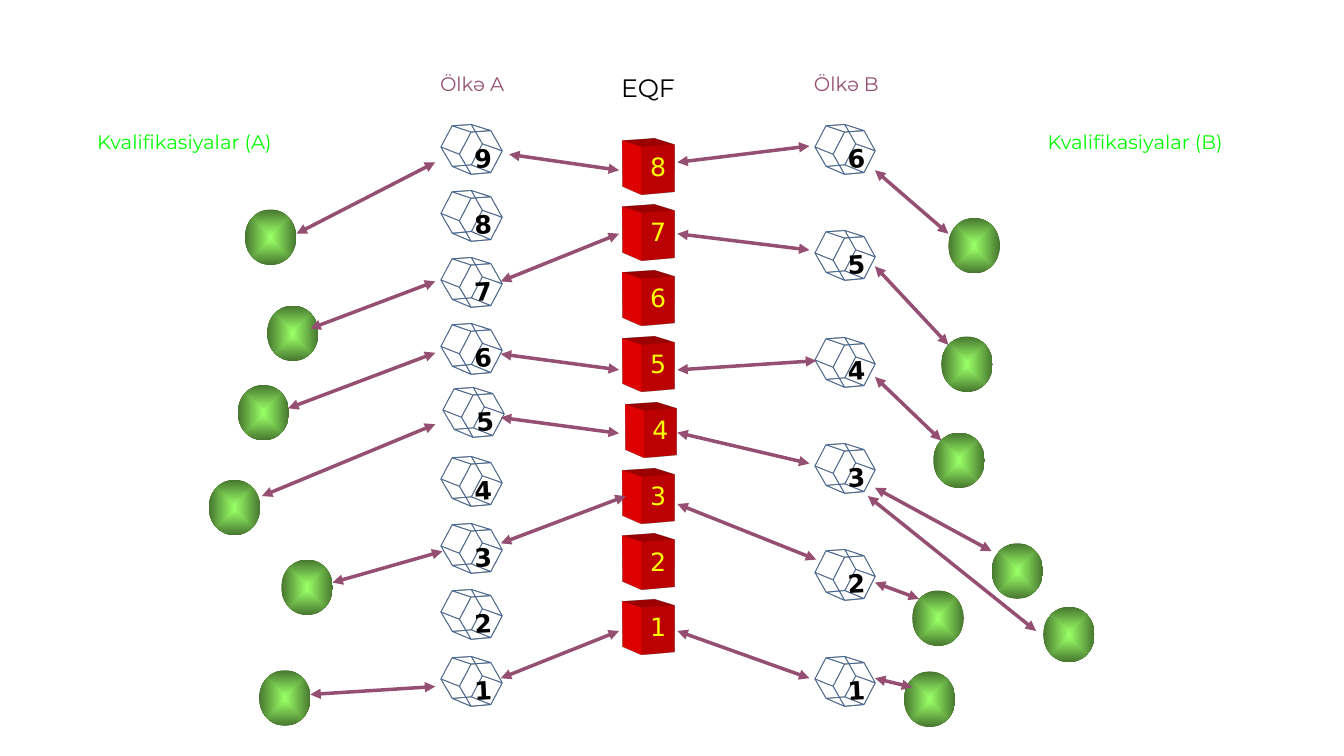
from collections import namedtuple
from dataclasses import dataclass

from lxml.etree import SubElement
from pptx import Presentation
from pptx.dml.color import RGBColor
from pptx.enum.shapes import MSO_CONNECTOR, MSO_SHAPE
from pptx.enum.text import MSO_ANCHOR, MSO_AUTO_SIZE, PP_ALIGN
from pptx.oxml import parse_xml
from pptx.oxml.ns import nsdecls, qn
from pptx.util import Cm, Pt


@dataclass(frozen=True)
class Theme:
    heading_font: str = "Montserrat"
    number_font: str = "DejaVu Sans"
    large: int = 18
    small: int = 14
    black: str = "000000"
    plum: str = "954F72"
    lime: str = "00FF00"
    yellow: str = "FFFF00"
    prism: str = "FFCC00"
    cube: str = "FF0000"
    ball_light: str = "99FF66"
    ball_dark: str = "47762F"


THEME = Theme()
Box = namedtuple("Box", "left top width height")

# Links between a country level and an EQF level: x1, y1, x2, y2
LINKS_A = [(0.21, 0.89, 2.98, 1.29), (0, 4.09, 2.98, 2.89),
           (0, 5.92, 2.98, 6.32), (0, 7.52, 2.98, 7.92),
           (0, 10.69, 3.15, 9.5), (0, 14.09, 2.98, 12.9)]
LINKS_B = [(3.33, 0.68, 0, 1.09), (3.33, 3.3, 0, 2.89),
           (3.5, 6.09, 0, 6.32), (3.33, 8.68, 0, 7.9),
           (3.5, 11.1, 0, 9.7), (3.33, 14.09, 0, 12.9)]

# Qualifications: ball corner, then its arrow
QUALIFICATIONS_A = [((1.17, 1.28), (2.47, 1.89, 5.97, 0.09)),
                    ((1.73, 3.7), (2.82, 4.28, 5.97, 3.09)),
                    ((0.99, 5.7), (2.26, 6.29, 5.97, 4.89)),
                    ((0.26, 8.09), (1.6, 8.5, 5.97, 6.69)),
                    ((2.09, 10.1), (3.38, 10.68, 6.15, 9.89)),
                    ((1.53, 12.89), (2.82, 13.5, 5.97, 13.3))]
QUALIFICATIONS_B = [((1.9, 1.49), (1.9, 1.89, 0.05, 0.29)),
                    ((1.72, 4.48), (1.9, 4.69, 0.05, 2.71)),
                    ((1.52, 6.9), (1.72, 7.1, 0.05, 5.5)),
                    ((2.99, 9.69), (2.99, 9.89, 0.05, 8.29)),
                    ((4.29, 11.29), (4.11, 11.9, -0.13, 8.5)),
                    ((0.99, 10.88), (1.16, 11.09, 0.05, 10.68)),
                    ((0.78, 12.92), (0.99, 13.32, 0.05, 13.09))]


def write(sp, text, color, **font):
    tf = sp.text_frame
    frame = {"word_wrap": False, "auto_size": MSO_AUTO_SIZE.NONE,
             "vertical_anchor": MSO_ANCHOR.TOP}
    for name, value in frame.items():
        setattr(tf, name, value)
    p = tf.paragraphs[0]
    p.alignment = PP_ALIGN.CENTER
    r = p.add_run()
    r.text = text
    for name, value in font.items():
        setattr(r.font, name, value)
    r.font.color.rgb = RGBColor.from_string(color)


def add_text(shapes, box, text, color, **font):
    sp = shapes.add_textbox(*map(Cm, box))
    write(sp, text, color, **font)
    return sp


def add_shape(shapes, kind, box):
    sp = shapes.add_shape(kind, *map(Cm, box))
    sp.shadow.inherit = False
    sp.line.fill.background()
    return sp


def add_solid(shapes, kind, box, color, material):
    """Add a shape with depth, seen from above and from its left."""
    sp = add_shape(shapes, kind, box)
    sp.fill.solid()
    sp.fill.fore_color.rgb = RGBColor.from_string(color)
    spPr = sp._element.spPr
    spPr.append(parse_xml(
        f'<a:scene3d {nsdecls("a")}><a:camera prst="legacyPerspectiveFront">'
        '<a:rot lat="600000" lon="20100000" rev="0"/></a:camera>'
        '<a:lightRig rig="legacyFlat3" dir="t"/></a:scene3d>'))
    spPr.append(parse_xml(
        f'<a:sp3d {nsdecls("a")} extrusionH="430200" prstMaterial="{material}">'
        f'<a:extrusionClr><a:srgbClr val="{color}"/></a:extrusionClr></a:sp3d>'))
    return sp


def add_prism(s, left, top, level):
    shapes = s.shapes.add_group_shape().shapes
    sp = add_solid(shapes, MSO_SHAPE.HEXAGON, Box(left, top, 1.19, 1.09),
                   THEME.prism, "legacyWireframe")
    sp.adjustments[0] = 0.295
    number = add_text(shapes, Box(left + 0.16, top + 0.17, 0.97, 1.02), str(level),
                      THEME.black, name=THEME.number_font,
                      size=Pt(THEME.large), bold=True)
    number.rotation = 357


def add_cube(s, left, top, level):
    shapes = s.shapes.add_group_shape().shapes
    add_solid(shapes, MSO_SHAPE.RECTANGLE, Box(left, top, 0.91, 1.19),
              THEME.cube, "legacyMatte")
    add_text(shapes, Box(left, top, 0.91, 1.02), str(level),
             THEME.yellow, name=THEME.number_font, size=Pt(THEME.large))


def add_ball(s, left, top):
    sp = add_shape(s.shapes, MSO_SHAPE.OVAL, Box(left, top, 1.3, 1.4))
    gradient = parse_xml(
        f'<a:gradFill {nsdecls("a")} rotWithShape="1"><a:gsLst>'
        f'<a:gs pos="0"><a:srgbClr val="{THEME.ball_light}"/></a:gs>'
        f'<a:gs pos="100000"><a:srgbClr val="{THEME.ball_dark}"/></a:gs>'
        '</a:gsLst><a:path path="shape">'
        '<a:fillToRect l="50000" t="50000" r="50000" b="50000"/>'
        '</a:path></a:gradFill>')
    sp._element.spPr.find(qn("a:prstGeom")).addnext(gradient)


def add_arrow(s, box, x1, y1, x2, y2):
    line = s.shapes.add_connector(
        MSO_CONNECTOR.STRAIGHT, Cm(box.left + x1), Cm(box.top + y1),
        Cm(box.left + x2), Cm(box.top + y2))
    line.line.color.rgb = RGBColor.from_string(THEME.plum)
    line.line.width = Pt(2.5)
    ln = line.line._get_or_add_ln()
    for end in ("a:headEnd", "a:tailEnd"):
        SubElement(ln, qn(end), type="triangle")
    SubElement(line._element.spPr, qn("a:effectLst"))


def headings(s, box):
    sp = s.shapes.title
    place = Box(box.left + 13, box.top, 3.2, 1.6)
    for name, value in place._asdict().items():
        setattr(sp, name, Cm(value))
    write(sp, "EQF", THEME.black, name=THEME.heading_font, size=Pt(THEME.large))
    for x, y, w, h, text, color in [
            (9.04, 0, 2.26, 1.45, "Ölkə A", THEME.plum),
            (18.47, 0, 2.26, 1.45, "Ölkə B", THEME.plum),
            (0, 1.45, 5.84, 0.86, "Kvalifikasiyalar (A)", THEME.lime),
            (24.01, 1.45, 5.74, 0.86, "Kvalifikasiyalar (B)", THEME.lime)]:
        add_text(s.shapes, Box(box.left + x, box.top + y, w, h), text, color,
                 name=THEME.heading_font, size=Pt(THEME.small))


def level_column(s, box, count, draw, nudges):
    """Stack levels from the highest down; the box spans the first to last top."""
    pitch = box.height / (count - 1)
    for i in range(count):
        level = count - i
        dx, dy = nudges.get(level, (0, 0))
        draw(s, box.left + dx, box.top + i * pitch + dy, level)


def links(s, box, arrows):
    for arrow in arrows:
        add_arrow(s, box, *arrow)


def qualifications(s, box, items):
    for (x, y), _ in items:
        add_ball(s, box.left + x, box.top + y)
    links(s, box, [arrow for _, arrow in items])


def main():
    prs = Presentation()
    prs.slide_width, prs.slide_height = Cm(33.87), Cm(19.05)
    s = prs.slides.add_slide(prs.slide_layouts[5])
    headings(s, Box(1.73, 1.7, 29.74, 2.31))
    # Levels of country A, the EQF and country B
    level_column(s, Box(11.53, 3.3, 1.19, 13.4), 9, add_prism, {5: (0.05, -0.07)})
    level_column(s, Box(16.13, 3.68, 0.91, 11.61), 8, add_cube, {4: (0.06, 0)})
    level_column(s, Box(20.94, 3.3, 1.19, 13.4), 6, add_prism, {})
    # Qualifications on both sides
    qualifications(s, Box(5, 4, 6, 14.5), QUALIFICATIONS_A)
    qualifications(s, Box(22, 4, 6, 14.5), QUALIFICATIONS_B)
    # Links to the EQF
    links(s, Box(12.62, 3, 3, 14.1), LINKS_A)
    links(s, Box(17.07, 3, 3.4, 14.1), LINKS_B)
    prs.save("out.pptx")


if __name__ == "__main__":
    main()
